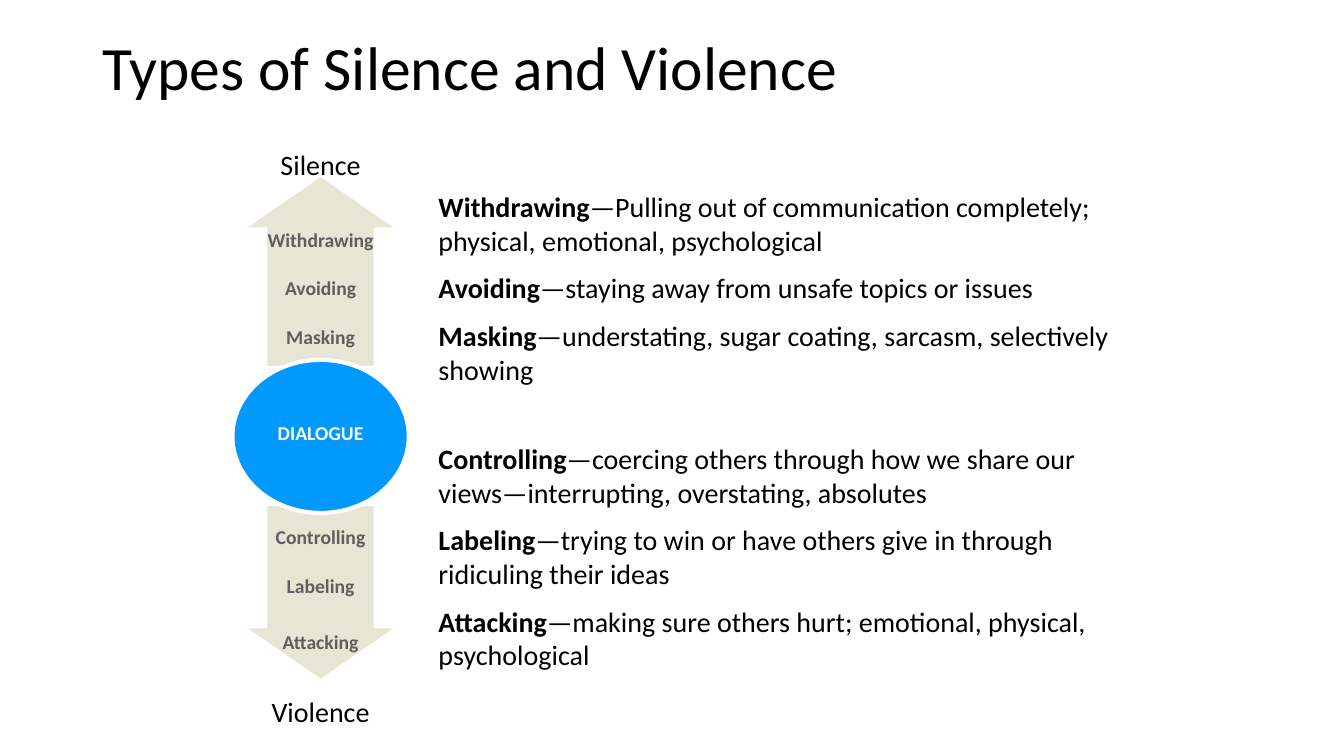
"""Build the slide on types of silence and violence around a dialogue."""
import dataclasses
import typing

import lxml.etree
import pptx
import pptx.dml.color
import pptx.enum.shapes
import pptx.enum.text
import pptx.oxml.ns
import pptx.util

Pt = pptx.util.Pt
RGB = pptx.dml.color.RGBColor
Shapes = pptx.enum.shapes.MSO_SHAPE
Align = pptx.enum.text.PP_ALIGN
Anchor = pptx.enum.text.MSO_ANCHOR
AutoSize = pptx.enum.text.MSO_AUTO_SIZE


@dataclasses.dataclass(frozen=True)
class Theme:
    font: str = "Calibri"
    black: RGB = RGB(0x00, 0x00, 0x00)
    white: RGB = RGB(0xFF, 0xFF, 0xFF)
    grey: RGB = RGB(0x5F, 0x5F, 0x5F)
    sand: RGB = RGB(0xD0, 0xCC, 0xA8)
    blue: RGB = RGB(0x00, 0x99, 0xFF)
    title_size: float = 44
    text_size: float = 20
    label_size: float = 14
    outline: float = 3


class Figure(typing.NamedTuple):
    kind: Shapes
    top: float
    width: float
    height: float
    color: RGB
    opacity: int = 100
    adjustments: tuple[float, ...] = ()


class Label(typing.NamedTuple):
    text: str
    top: float
    color: RGB
    width: float = 90
    height: float = 23
    size: float = 14
    bold: bool = True


class Definition(typing.NamedTuple):
    term: str
    meaning: str


class DefinitionList(typing.NamedTuple):
    placeholder: int
    top: float
    height: float
    definitions: tuple[Definition, ...]


THEME = Theme()
AXIS = 229
ARROW = (0.693, 0.346)

FIGURES = (
    Figure(Shapes.DOWN_ARROW, 360, 113.76, 126.72, THEME.sand, 50, ARROW),
    Figure(Shapes.UP_ARROW, 124.56, 113.76, 138.24, THEME.sand, 50, ARROW),
    Figure(Shapes.OVAL, 257, 126, 109.44, THEME.blue),
)
LABELS = (
    Label("Silence", 101.5, THEME.black, 90, 30, THEME.text_size, False),
    Label("Withdrawing", 159.1, THEME.grey, 113.76),
    Label("Avoiding", 193.7, THEME.grey),
    Label("Masking", 228.2, THEME.grey),
    Label("DIALOGUE", 297.4, THEME.white),
    Label("Controlling", 371.5, THEME.grey),
    Label("Labeling", 406.1, THEME.grey),
    Label("Attacking", 446.4, THEME.grey),
    Label("Violence", 492.5, THEME.black, 132, 30, THEME.text_size, False),
)
LISTS = (
    DefinitionList(1, 131.8, 151.2, (
        Definition("Withdrawing", "Pulling out of communication completely; physical, emotional, psychological"),
        Definition("Avoiding", "staying away from unsafe topics or issues"),
        Definition("Masking", "understating, sugar coating, sarcasm, selectively showing"),
    )),
    DefinitionList(2, 311.8, 175, (
        Definition("Controlling", "coercing others through how we share our views—interrupting, overstating, absolutes"),
        Definition("Labeling", "trying to win or have others give in through ridiculing their ideas"),
        Definition("Attacking", "making sure others hurt; emotional, physical, psychological"),
    )),
)


def place(shape: typing.Any, left: float, top: float, width: float, height: float) -> None:
    shape.left, shape.top, shape.width, shape.height = map(Pt, (left, top, width, height))


def style(run: typing.Any, size: float, color: RGB, bold: bool = False) -> None:
    run.font.name = THEME.font
    run.font.size = Pt(size)
    run.font.color.rgb = color
    run.font.bold = bold


def draw_figure(shapes: typing.Any, figure: Figure) -> None:
    shape = shapes.add_shape(figure.kind, Pt(AXIS - figure.width / 2), Pt(figure.top),
                             Pt(figure.width), Pt(figure.height))
    for index, value in enumerate(figure.adjustments):
        shape.adjustments[index] = value
    shape.shadow.inherit = False
    shape.fill.solid()
    shape.fill.fore_color.rgb = figure.color
    shape.line.color.rgb = THEME.white
    shape.line.width = Pt(THEME.outline)
    if figure.opacity < 100:
        color = shape.fill._xPr.find(".//" + pptx.oxml.ns.qn("a:srgbClr"))
        alpha = lxml.etree.SubElement(color, pptx.oxml.ns.qn("a:alpha"))
        alpha.set("val", str(figure.opacity * 1000))


def draw_label(shapes: typing.Any, label: Label) -> None:
    box = shapes.add_textbox(Pt(AXIS - label.width / 2), Pt(label.top),
                             Pt(label.width), Pt(label.height))
    frame = box.text_frame
    frame.text = label.text
    frame.word_wrap = True
    frame.auto_size = AutoSize.SHAPE_TO_FIT_TEXT
    paragraph = frame.paragraphs[0]
    paragraph.alignment = Align.CENTER
    style(paragraph.runs[0], label.size, label.color, label.bold)


def fill_list(slide: typing.Any, block: DefinitionList) -> None:
    shape = slide.placeholders[block.placeholder]
    place(shape, 306, block.top, 510, block.height)
    frame = shape.text_frame
    frame.word_wrap = True
    frame.auto_size = AutoSize.NONE
    frame.vertical_anchor = Anchor.TOP
    for index, definition in enumerate(block.definitions):
        paragraph = frame.paragraphs[0] if index == 0 else frame.add_paragraph()
        properties = paragraph._p.get_or_add_pPr()
        properties.set("marL", "0")
        properties.set("indent", "0")
        lxml.etree.SubElement(properties, pptx.oxml.ns.qn("a:buNone"))
        paragraph.space_before = Pt(10 if index else 0)
        for text, bold in ((definition.term, True), ("—" + definition.meaning, False)):
            run = paragraph.add_run()
            run.text = text
            style(run, THEME.text_size, THEME.black, bold)


def fill_title(slide: typing.Any, text: str) -> None:
    title = slide.shapes.title
    place(title, 66, -1.5, 828, 104.4)
    title.text_frame.text = text
    title.text_frame.auto_size = AutoSize.NONE
    title.text_frame.vertical_anchor = Anchor.MIDDLE
    paragraph = title.text_frame.paragraphs[0]
    paragraph.alignment = Align.LEFT
    paragraph.line_spacing = 0.9
    style(paragraph.runs[0], THEME.title_size, THEME.black)


def main() -> None:
    presentation = pptx.Presentation()
    presentation.slide_width, presentation.slide_height = Pt(960), Pt(540)
    slide = presentation.slides.add_slide(presentation.slide_layouts.get_by_name("Two Content"))
    fill_title(slide, "Types of Silence and Violence")
    diagram = slide.shapes.add_group_shape()
    for figure in FIGURES:
        draw_figure(diagram.shapes, figure)
    for label in LABELS:
        draw_label(diagram.shapes, label)
    for block in LISTS:
        fill_list(slide, block)
    presentation.save("out.pptx")


if __name__ == "__main__":
    main()
